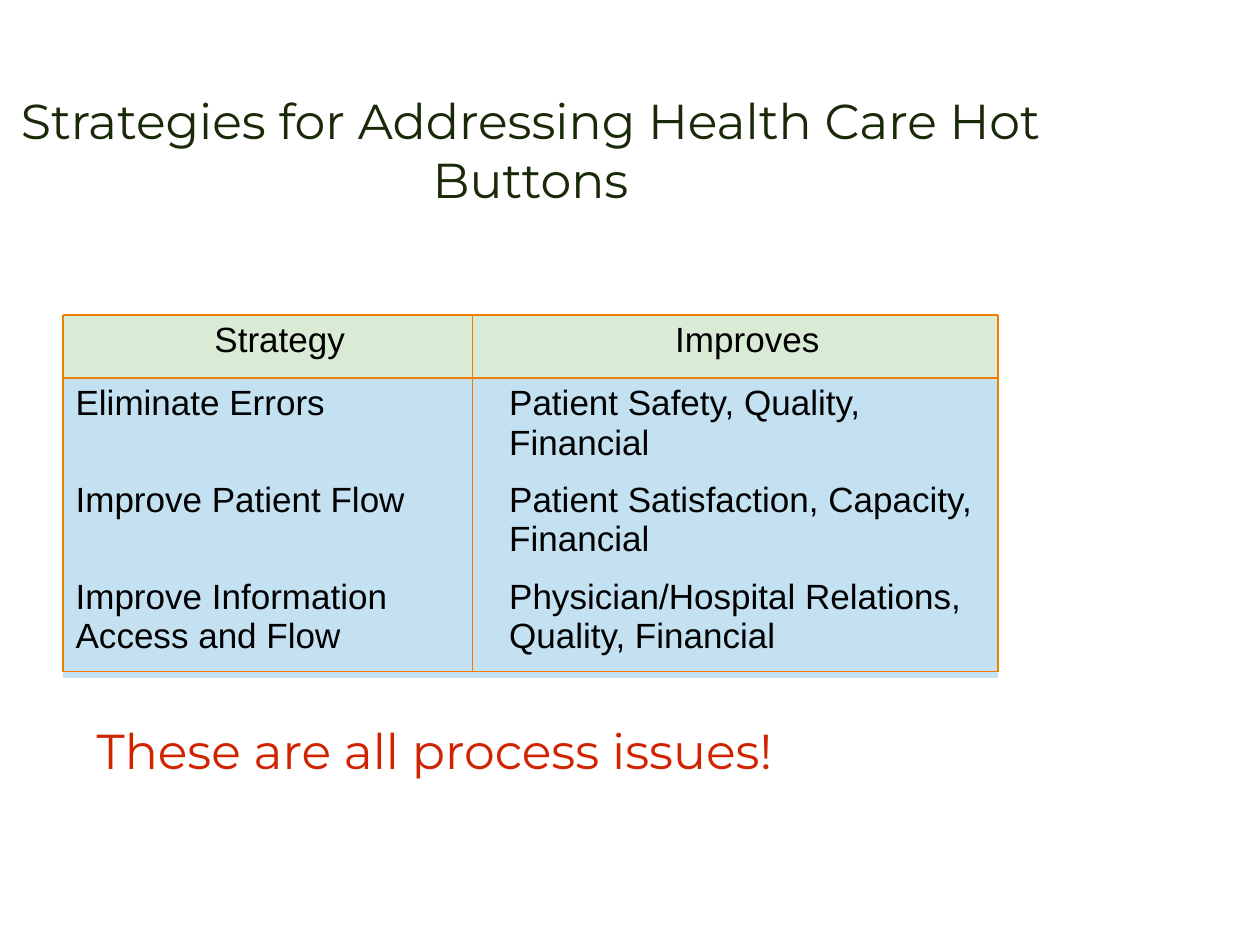
"""Build the slide on strategies for health care hot buttons."""
from dataclasses import dataclass

from lxml import etree
from pptx import Presentation
from pptx.dml.color import RGBColor as Rgb
from pptx.enum.shapes import MSO_CONNECTOR as Connector
from pptx.enum.text import PP_ALIGN as Align
from pptx.oxml.ns import qn
from pptx.util import Cm, Pt


@dataclass(frozen=True)
class Theme:
    heading_font: str = "Montserrat"
    table_font: str = "Arial"
    heading_size: int = 28
    table_size: int = 20
    title: str = "1A2907"
    conclusion: str = "D02300"
    text: str = "000000"
    header_fill: str = "D9EAD5"
    body_fill: str = "C4E1F2"
    rule: str = "F07C03"
    rule_width: float = 0.75


theme = Theme()


def write(frame, lines, font, size, color, align=Align.LEFT):
    """Write each line as one paragraph of the frame."""
    frame.word_wrap = True
    for index, line in enumerate(lines):
        paragraph = frame.add_paragraph() if index else frame.paragraphs[0]
        paragraph.alignment = align
        run = paragraph.add_run()
        run.text = line
        run.font.name = font
        run.font.size = Pt(size)
        run.font.color.rgb = Rgb.from_string(color)


deck = Presentation()
deck.slide_width, deck.slide_height = Cm(25.4), Cm(19.05)
slide = deck.slides.add_slide(deck.slide_layouts[6])

title = slide.shapes.add_textbox(Cm(0), Cm(1.7), Cm(21.39), Cm(1.7))
write(title.text_frame, ["Strategies for Addressing Health Care Hot Buttons"],
      theme.heading_font, theme.heading_size, theme.title, Align.CENTER)

strategies = [
    (["Strategy"], ["Improves"]),
    (["Eliminate Errors"], ["Patient Safety, Quality, Financial"]),
    (["Improve Patient Flow"], ["Patient Satisfaction, Capacity,", "Financial"]),
    (["Improve Information Access and Flow"],
     ["Physician/Hospital Relations,", "Quality, Financial"]),
]
column_widths = [8.74, 10.11]
row_heights = [1.27, 1.83, 1.83, 2.14]
left, top = 1.27, 6.35
right = left + sum(column_widths)
bottom, divider, header_bottom = 13.54, 9.53, top + row_heights[0]

grid = slide.shapes.add_table(len(row_heights), len(column_widths), Cm(left), Cm(top),
                              Cm(right - left), Cm(sum(row_heights))).table
grid.first_row = grid.horz_banding = False
grid._tbl.tblPr.find(qn("a:tableStyleId")).text = "{2D5ABB26-0587-4C30-8999-92F81FD0307C}"
for column, width in zip(grid.columns, column_widths):
    column.width = Cm(width)
for row_index, (row, height) in enumerate(zip(grid.rows, row_heights)):
    row.height = Cm(height)
    fill = theme.body_fill if row_index else theme.header_fill
    align = Align.LEFT if row_index else Align.CENTER
    for cell, lines in zip(row.cells, strategies[row_index]):
        cell.fill.solid()
        cell.fill.fore_color.rgb = Rgb.from_string(fill)
        write(cell.text_frame, lines, theme.table_font, theme.table_size, theme.text, align)

rules = [(x, top, x, bottom) for x in (left, divider, right)]
rules += [(left, y, right, y) for y in (top, header_bottom, bottom)]
for ends in rules:
    rule = slide.shapes.add_connector(Connector.STRAIGHT, *map(Cm, ends))
    rule.line.color.rgb = Rgb.from_string(theme.rule)
    rule.line.width = Pt(theme.rule_width)
    etree.SubElement(rule._element.spPr, qn("a:effectLst"))

conclusion = slide.shapes.add_textbox(Cm(1.7), Cm(14.4), Cm(16.46), Cm(1.45))
write(conclusion.text_frame, ["These are all process issues!"],
      theme.heading_font, theme.heading_size, theme.conclusion)

deck.save("out.pptx")
